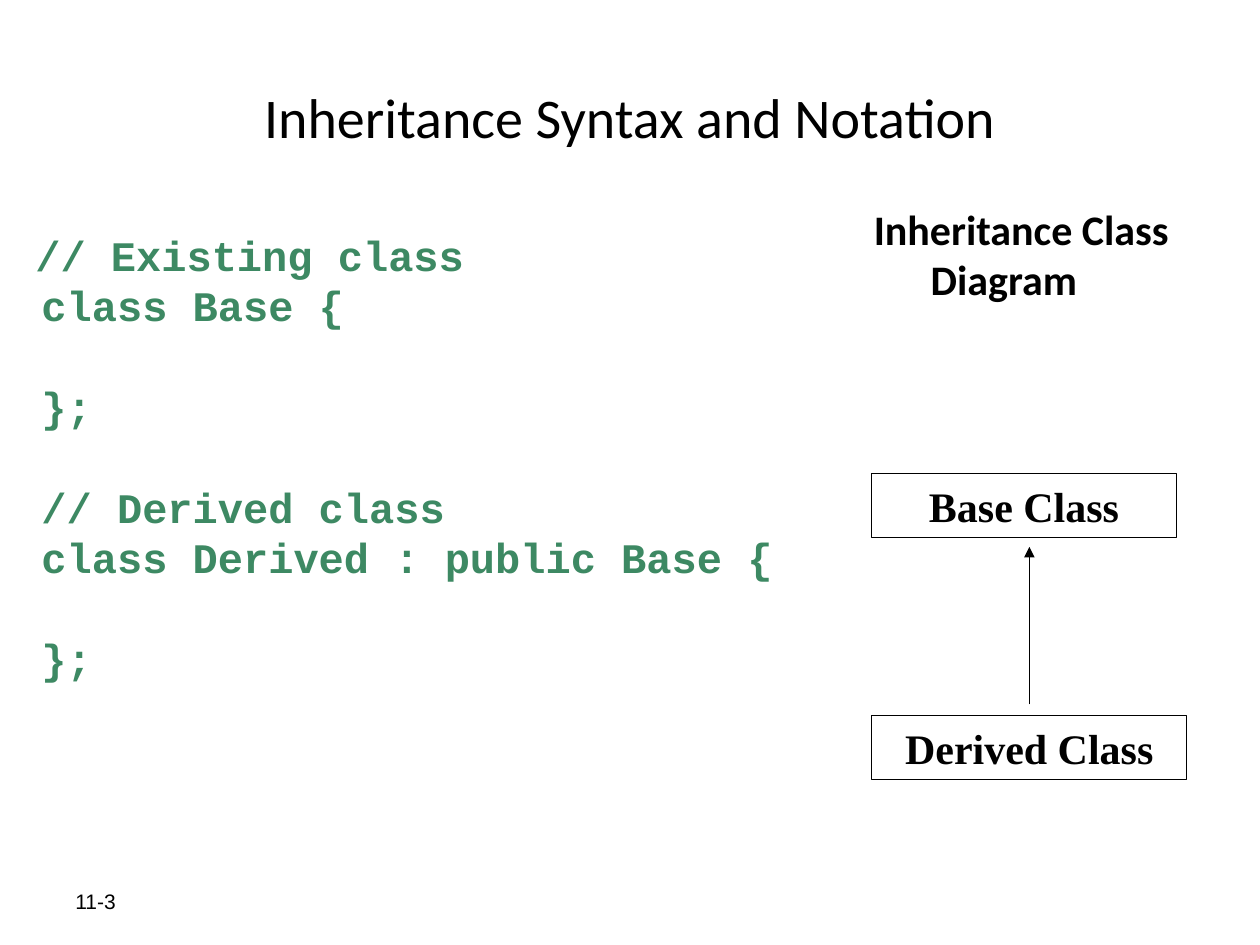
from lxml import etree
from pptx import Presentation
from pptx.dml.color import RGBColor
from pptx.enum.shapes import MSO_CONNECTOR, MSO_SHAPE
from pptx.enum.text import MSO_ANCHOR, PP_ALIGN
from pptx.oxml.ns import qn
from pptx.util import Pt

COLORS = {"text": "000000", "code": "3D8963", "background": "FFFFFF"}


def write_lines(shape, lines, font, size, color="text", bold=False,
                align=PP_ALIGN.LEFT, anchor=MSO_ANCHOR.MIDDLE):
    frame = shape.text_frame
    frame.text = "\n".join(lines)
    frame.word_wrap = True
    frame.vertical_anchor = anchor
    for paragraph in frame.paragraphs:
        paragraph.alignment = align
        for run in paragraph.runs:
            run.font.name = font
            run.font.size = Pt(size)
            run.font.bold = bold
            run.font.color.rgb = RGBColor.from_string(COLORS[color])
    return frame


def add_text(left, top, width, height, lines, font, size, **style):
    box = slide.shapes.add_textbox(Pt(left), Pt(top), Pt(width), Pt(height))
    return write_lines(box, lines, font, size, **style)


prs = Presentation()
prs.slide_width, prs.slide_height = Pt(720), Pt(540)
slide = prs.slides.add_slide(prs.slide_layouts[6])
slide.background.fill.solid()
slide.background.fill.fore_color.rgb = RGBColor.from_string(COLORS["background"])

add_text(36, 21.6, 648, 90, ["Inheritance Syntax and Notation"],
         "Calibri", 32, align=PP_ALIGN.CENTER)

code_lines = ["// Existing class", "class Base {", "};",
              "// Derived class", "class Derived : public Base {", "};"]
line_height = 28.8
code = add_text(13.1, 127.4, 470, 270, code_lines, "Courier New", 24,
                color="code", bold=True, anchor=MSO_ANCHOR.TOP)
for index, paragraph in enumerate(code.paragraphs):
    paragraph.line_spacing = Pt(line_height)
    if index > 0:
        paragraph._p.get_or_add_pPr().set("marL", str(Pt(3.5)))
    if index in (2, 3, 5):
        paragraph.space_before = Pt(line_height)

heading = add_text(492.2, 112.6, 220, 70, ["Inheritance Class", "Diagram"],
                   "Calibri", 24, bold=True, anchor=MSO_ANCHOR.TOP)
heading.paragraphs[1]._p.get_or_add_pPr().set("marL", str(Pt(32.5)))

add_text(36, 500.4, 168, 28.8, ["11-3"], "Arial", 12)

for class_name, top, width in [("Base Class", 270.6, 174), ("Derived Class", 408.8, 180)]:
    class_box = slide.shapes.add_shape(
        MSO_SHAPE.RECTANGLE, Pt(498.2), Pt(top), Pt(width), Pt(36.7))
    class_box.shadow.inherit = False
    class_box.fill.background()
    class_box.line.color.rgb = RGBColor.from_string(COLORS["text"])
    class_box.line.width = Pt(0.75)
    write_lines(class_box, [class_name], "Times New Roman", 24,
                bold=True, align=PP_ALIGN.CENTER)

inheritance = slide.shapes.add_connector(
    MSO_CONNECTOR.STRAIGHT, Pt(588.2), Pt(402.5), Pt(588.2), Pt(312.5))
inheritance.line.color.rgb = RGBColor.from_string(COLORS["text"])
inheritance.line.width = Pt(0.75)
etree.SubElement(inheritance.line._get_or_add_ln(), qn("a:tailEnd"), type="triangle")
etree.SubElement(inheritance._element.spPr, qn("a:effectLst"))

prs.save("out.pptx")
